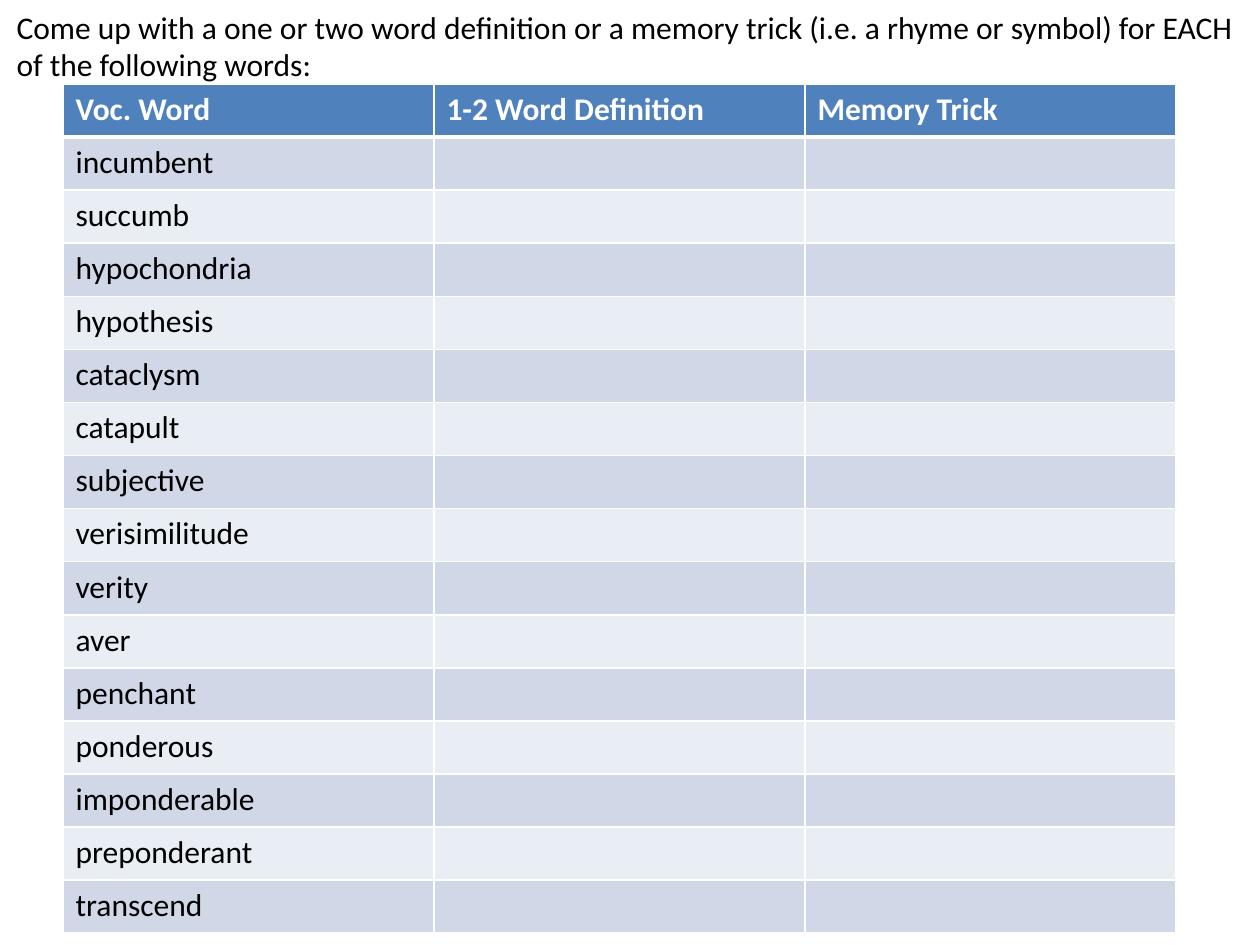
from dataclasses import dataclass

from lxml.etree import SubElement
from pptx import Presentation
from pptx.dml.color import RGBColor
from pptx.enum.text import MSO_ANCHOR, MSO_AUTO_SIZE, PP_ALIGN
from pptx.oxml.ns import qn
from pptx.util import Emu, Pt

EMU_PER_PX = 914400 / 126
FONT_NAME = "Calibri"
FONT_SIZE = Pt(18)
WHITE = RGBColor(0xFF, 0xFF, 0xFF)
BLACK = RGBColor(0x00, 0x00, 0x00)
HEADER_BLUE = RGBColor(0x4F, 0x81, 0xBD)
BAND_DARK = RGBColor(0xD0, 0xD8, 0xE8)
BAND_LIGHT = RGBColor(0xE9, 0xED, 0xF4)

INSTRUCTION = (
    "Come up with a one or two word definition or a memory trick "
    "(i.e. a rhyme or symbol) for EACH of the following words:"
)
HEADINGS = ["Voc. Word", "1-2 Word Definition", "Memory Trick"]
WORDS = [
    "incumbent", "succumb", "hypochondria", "hypothesis", "cataclysm",
    "catapult", "subjective", "verisimilitude", "verity", "aver",
    "penchant", "ponderous", "imponderable", "preponderant", "transcend",
]


@dataclass(frozen=True)
class Box:
    """A rectangle in px."""

    left: int
    top: int
    width: int
    height: int

    def emu(self) -> tuple[Emu, Emu, Emu, Emu]:
        """Return left, top, width and height in EMU."""
        return px(self.left), px(self.top), px(self.width), px(self.height)


@dataclass(frozen=True)
class RowStyle:
    """The look of one table row, with rule widths in points."""

    fill: RGBColor
    text: RGBColor
    bold: bool = False
    top_rule: int = 1
    bottom_rule: int = 1


TITLE_BOX = Box(4, -5, 1260, 101)
TABLE_BOX = Box(63, 84, 1113, 850)
HEADER_STYLE = RowStyle(HEADER_BLUE, WHITE, bold=True, bottom_rule=3)
FIRST_STYLE = RowStyle(BAND_DARK, BLACK, top_rule=3)
BAND_STYLES = [RowStyle(BAND_DARK, BLACK), RowStyle(BAND_LIGHT, BLACK)]


def px(length: int) -> Emu:
    """Turn px into EMU."""
    return Emu(round(length * EMU_PER_PX))


def format_text(text_frame, color: RGBColor, bold: bool = False) -> None:
    """Apply the slide's font to every run."""
    for paragraph in text_frame.paragraphs:
        for run in paragraph.runs:
            run.font.name = FONT_NAME
            run.font.size = FONT_SIZE
            run.font.bold = bold
            run.font.color.rgb = color


def add_borders(cell, style: RowStyle) -> None:
    """Draw white rules on the four sides of a cell."""
    properties = cell._tc.get_or_add_tcPr()
    widths = {"L": 1, "R": 1, "T": style.top_rule, "B": style.bottom_rule}
    for side, width in widths.items():
        line = SubElement(properties, qn(f"a:ln{side}"), w=str(Pt(width)))
        fill = SubElement(line, qn("a:solidFill"))
        SubElement(fill, qn("a:srgbClr"), val=str(WHITE))


def row_style(index: int) -> RowStyle:
    """Choose the style of a row by its position."""
    if index == 0:
        return HEADER_STYLE
    if index == 1:
        return FIRST_STYLE
    return BAND_STYLES[(index - 1) % 2]


def add_instruction(slide) -> None:
    """Place the instruction in the title placeholder."""
    title = slide.shapes.title
    title.left, title.top, title.width, title.height = TITLE_BOX.emu()
    text_frame = title.text_frame
    text_frame.text = INSTRUCTION
    text_frame.word_wrap = True
    text_frame.auto_size = MSO_AUTO_SIZE.NONE
    text_frame.vertical_anchor = MSO_ANCHOR.MIDDLE
    text_frame.paragraphs[0].alignment = PP_ALIGN.LEFT
    format_text(text_frame, BLACK)


def add_word_table(slide) -> None:
    """Add the vocabulary table with blank answer columns."""
    blanks = [""] * (len(HEADINGS) - 1)
    rows = [HEADINGS] + [[word, *blanks] for word in WORDS]
    table = slide.shapes.add_table(len(rows), len(HEADINGS), *TABLE_BOX.emu()).table
    for index, texts in enumerate(rows):
        style = row_style(index)
        for cell, text in zip(table.rows[index].cells, texts):
            add_borders(cell, style)
            cell.fill.solid()
            cell.fill.fore_color.rgb = style.fill
            if text:
                cell.text_frame.text = text
                format_text(cell.text_frame, style.text, style.bold)


def main() -> None:
    """Build and save the slide."""
    presentation = Presentation()
    presentation.slide_width = px(1260)
    presentation.slide_height = px(945)
    slide = presentation.slides.add_slide(presentation.slide_layouts[5])
    add_instruction(slide)
    add_word_table(slide)
    presentation.save("out.pptx")


if __name__ == "__main__":
    main()
